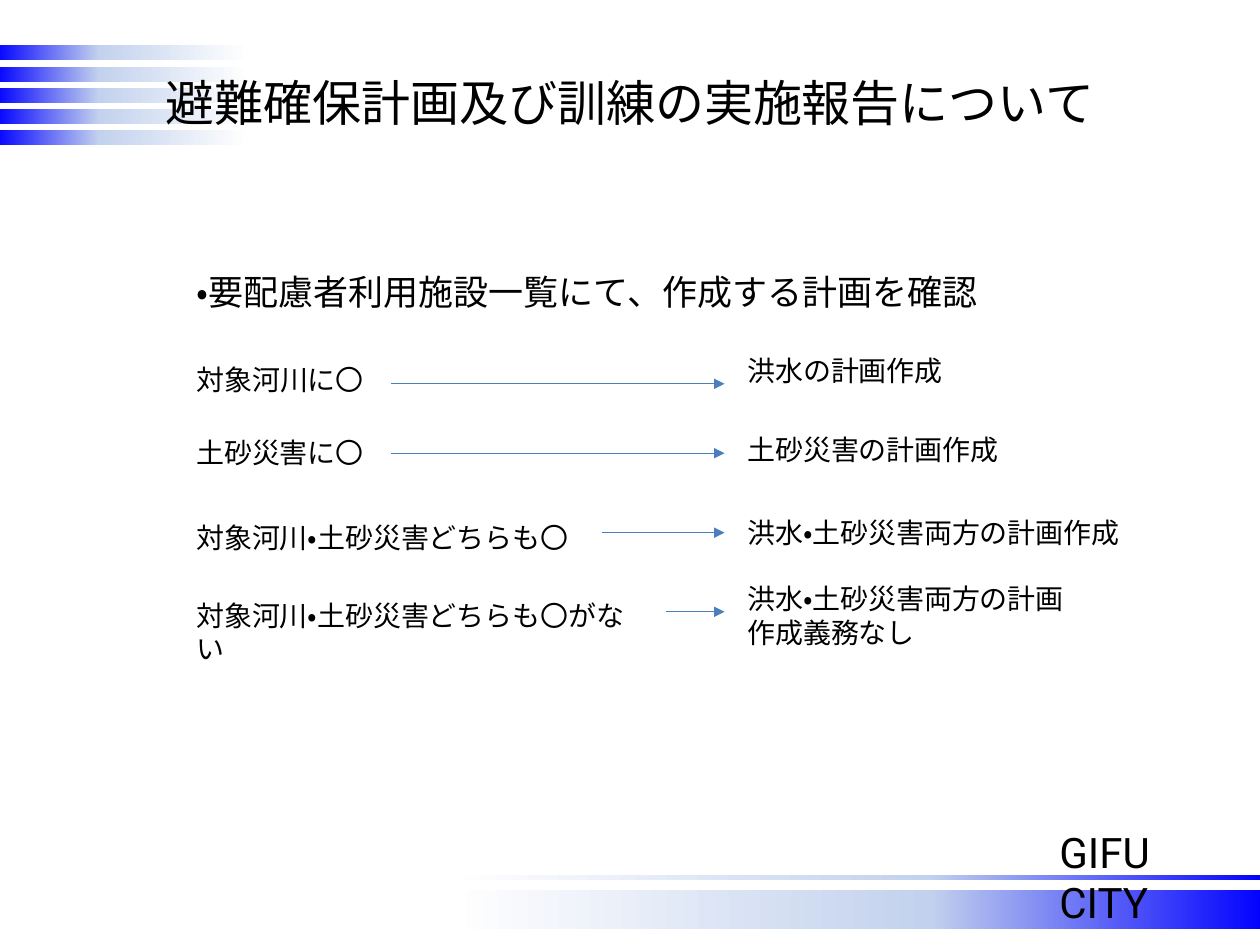
import copy

import lxml.etree
import pptx
import pptx.dml.color
import pptx.enum.lang
import pptx.enum.shapes
import pptx.enum.text
import pptx.oxml.ns
import pptx.util

Pt = pptx.util.Pt
Color = pptx.dml.color.RGBColor.from_string
qn = pptx.oxml.ns.qn

THEME = {
    "text": "000000", "arrow": "4B7EBC",
    "fade": [(0, "0000FF"), (35, "C2D1ED"), (85, "FFFFFF")],
    "body_font": "Calibri", "city_font": "Roboto",
    "title": 28, "lead": 20, "row": 16, "city": 24,
}


def write(box, text, size, font="body_font", align=pptx.enum.text.PP_ALIGN.LEFT):
    """Fill a box with one paragraph per line of text."""
    frame = box.text_frame
    frame.word_wrap = True
    frame.text = text
    for para in frame.paragraphs:
        para.alignment = align
        for span in para.runs:
            formats = {"name": THEME[font], "size": Pt(THEME[size]),
                       "language_id": pptx.enum.lang.MSO_LANGUAGE_ID.JAPANESE}
            for name, value in formats.items():
                setattr(span.font, name, value)
            span.font.color.rgb = Color(THEME["text"])


deck = pptx.Presentation()
deck.slide_width, deck.slide_height = Pt(720), Pt(540)
page = deck.slides.add_slide(deck.slide_layouts[5])

# Fading bars: a wide one and a thin one at the bottom, five at the top left
bars = [(175.7, 508.3, 547.2, 22.3, 180), (175, 499.7, 547.2, 2.9, 180)]
bars += [(-2.9, 26 + 12.05 * index, 169.9, 8.6, 0) for index in range(5)]
for left, top, width, height, rotation in bars:
    bar = page.shapes.add_shape(pptx.enum.shapes.MSO_SHAPE.RECTANGLE,
                                Pt(left), Pt(top), Pt(width), Pt(height))
    bar.shadow.inherit = False
    bar.rotation = rotation
    bar.line.fill.background()
    bar.fill.gradient()
    bar.fill.gradient_angle = 0
    stops = bar.element.spPr.find(".//" + qn("a:gsLst"))
    stops.append(copy.deepcopy(stops[-1]))
    for stop, (position, color) in zip(bar.fill.gradient_stops, THEME["fade"]):
        stop.position = position / 100
        stop.color.rgb = Color(color)

city = page.shapes.add_textbox(Pt(598.3), Pt(468.7), Pt(115.2), Pt(36))
write(city, "GIFU CITY", "city", "city_font")

# The title stands in front of the bars
title = page.shapes.title
title.left, title.top, title.width, title.height = Pt(36), Pt(13), Pt(648), Pt(90)
title.text_frame.vertical_anchor = pptx.enum.text.MSO_ANCHOR.MIDDLE
write(title, "避難確保計画及び訓練の実施報告について", "title",
      align=pptx.enum.text.PP_ALIGN.CENTER)
title.element.getparent().append(title.element)

lead = page.shapes.add_textbox(Pt(105.1), Pt(151.2), Pt(475.9), Pt(31.7))
write(lead, "・要配慮者利用施設一覧にて、作成する計画を確認", "lead")

# Condition (text, top, width), plan (text, top, width), arrow (start, height)
rows = [
    (("対象河川に〇", 203.8, 170), ("洪水の計画作成", 198.7, 193), (223.5, 219.3)),
    (("土砂災害に〇", 245.5, 164), ("土砂災害の計画作成", 243.6, 217), (223.5, 259)),
    (("対象河川・土砂災害どちらも〇", 293.8, 249),
     ("洪水・土砂災害両方の計画作成", 290.9, 232.6), (344, 304.4)),
    (("対象河川・土砂災害どちらも〇がない", 338.4, 273.6),
     ("洪水・土砂災害両方の計画\n作成義務なし", 329, 232.6), (380.7, 349.6)),
]
for condition, plan, (start, height) in rows:
    for left, (text, top, width) in ((105.1, condition), (420, plan)):
        lines = text.count("\n") + 1
        box = page.shapes.add_textbox(Pt(left), Pt(top), Pt(width),
                                      Pt(7.2 + 19.4 * lines))
        write(box, text, "row")
    arrow = page.shapes.add_connector(pptx.enum.shapes.MSO_CONNECTOR.STRAIGHT,
                                      Pt(start), Pt(height), Pt(414), Pt(height))
    arrow.line.color.rgb = Color(THEME["arrow"])
    arrow.line.width = Pt(0.75)
    lxml.etree.SubElement(arrow.line._get_or_add_ln(), qn("a:tailEnd"), type="triangle")
    lxml.etree.SubElement(arrow.element.spPr, qn("a:effectLst"))

deck.save("out.pptx")
